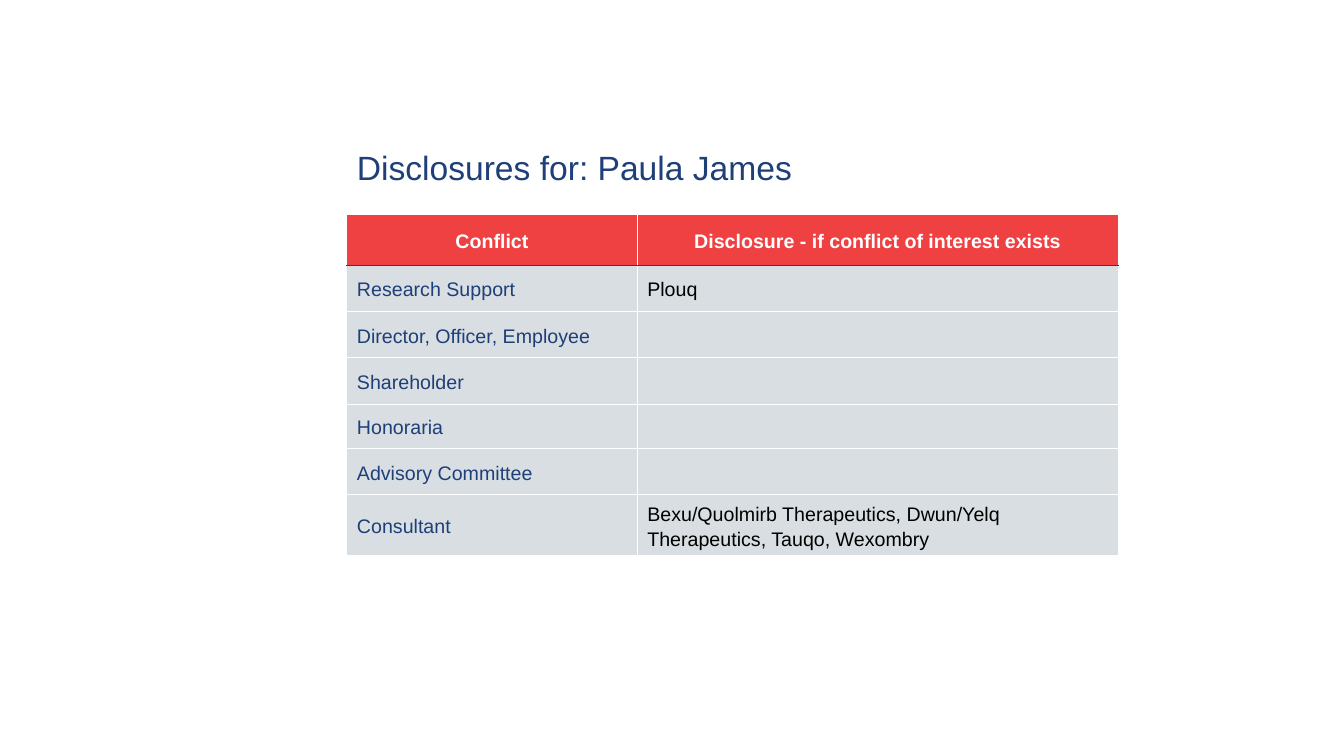
"""Build a disclosure slide with a conflict-of-interest table."""
from pptx import Presentation
from pptx.dml.color import RGBColor as RGB
from pptx.enum.text import MSO_ANCHOR as ANCHOR, PP_ALIGN as ALIGN
from pptx.oxml import parse_xml
from pptx.oxml.ns import nsdecls, qn
from pptx.util import Inches, Pt

COLORS = {"navy": "1F3F78", "red": "EF4042", "slate": "798E9A",
          "white": "FFFFFF", "black": "000000"}
ROWS = [
    ("Conflict", "Disclosure - if conflict of interest exists", 0.5),
    ("Research Support", "Plouq", 0.46),
    ("Director, Officer, Employee", "", 0.46),
    ("Shareholder", "", 0.46),
    ("Honoraria", "", 0.44),
    ("Advisory Committee", "", 0.46),
    ("Consultant", "Bexu/Quolmirb Therapeutics, Dwun/Yelq Therapeutics, Tauqo, Wexombry", 0.6),
]


def style(p, size, color, spacing):
    p.line_spacing = spacing
    p.font.name = "Arial"
    p.font.size = Pt(size)
    p.font.color.rgb = RGB.from_string(COLORS[color])


def add_border(cell, side, color):
    cell._tc.get_or_add_tcPr().append(parse_xml(
        f'<a:ln{side} {nsdecls("a")} w="12700"><a:solidFill>'
        f'<a:srgbClr val="{COLORS[color]}"/></a:solidFill></a:ln{side}>'))


prs = Presentation()
prs.slide_width, prs.slide_height = Inches(13.33), Inches(7.5)
s = prs.slides.add_slide(prs.slide_layouts[6])

table = s.shapes.add_table(len(ROWS), 2, Inches(3.44), Inches(2.13),
                           Inches(7.65), Inches(3.39)).table
table.columns[0].width = Inches(2.88)
table.columns[1].width = Inches(4.77)

for i, (conflict, disclosure, height) in enumerate(ROWS):
    table.rows[i].height = Inches(height)
    for j, text in enumerate((conflict, disclosure)):
        cell = table.cell(i, j)
        cell.vertical_anchor = ANCHOR.MIDDLE
        for side in "LRTB":
            under_header = (i, side) in ((0, "B"), (1, "T"))
            add_border(cell, side, "navy" if under_header else "white")
        cell.fill.solid()
        cell.fill.fore_color.rgb = RGB.from_string(COLORS["slate" if i else "red"])
        p = cell.text_frame.paragraphs[0]
        p.text = text
        if i == 0:
            style(p, 14, "white", 1.15)
            p.font.bold = True
            p.alignment = ALIGN.CENTER
        else:
            style(p, 14, "black" if j else "navy", 1.15)
            p.font.bold = False
            fill = cell._tc.tcPr.find(qn("a:solidFill"))
            fill[0].append(parse_xml(f'<a:alpha {nsdecls("a")} val="29000"/>'))

title = s.shapes.add_textbox(Inches(3.44), Inches(1.28), Inches(7.32), Inches(0.8))
tf = title.text_frame
tf.word_wrap = True
tf.vertical_anchor = ANCHOR.MIDDLE
p = tf.paragraphs[0]
p.text = "Disclosures for: Paula James"
style(p, 24, "navy", 0.9)

prs.save("out.pptx")
